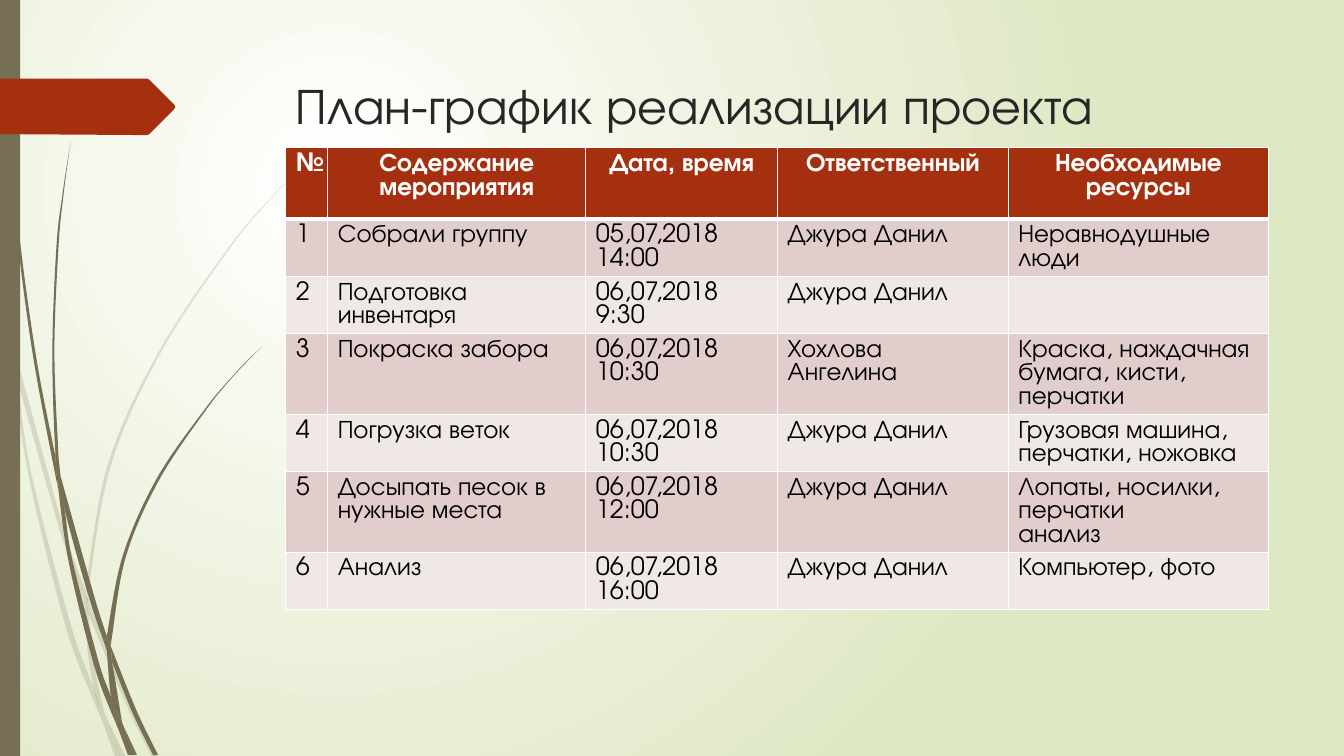
from dataclasses import dataclass

from lxml.etree import SubElement
from pptx import Presentation
from pptx.dml.color import RGBColor
from pptx.enum.shapes import MSO_SHAPE
from pptx.enum.text import MSO_ANCHOR, MSO_AUTO_SIZE, PP_ALIGN
from pptx.oxml.ns import qn
from pptx.util import Pt


@dataclass(frozen=True)
class Theme:
    font: str = "TeX Gyre Adventor"
    title_size: float = 36
    table_size: float = 18
    table_leading: float = 16.8
    title: str = "262626"
    text: str = "000000"
    white: str = "FFFFFF"
    glow_edge: str = "DFE8C4"
    accent: str = "A53010"
    stem: str = "766F54"
    bands: tuple = ("E1CDCC", "F0E8E7")


PALE_BLADES = [
    ([(7.9, 252), (6.5, 231.8), (0, 203)], [(0, 215.3), (7.2, 247.7)]),
    ([(10.1, 248.4), (44.6, 374.4), (61.2, 421.9)],
     [(60.5, 431.3), (41.8, 375.8), (12.2, 270.7)]),
    ([(63.4, 429.1), (66.2, 437), (91.4, 498.2), (111.6, 540)],
     [(108, 540), (88.6, 499.7), (63.4, 439.2)]),
    ([(75.6, 511.9), (89.3, 540)], [(85.7, 540)]),
    ([(7.9, 252), (12.2, 270.7), (22.3, 337.7), (50.4, 445.7), (67, 491.8),
      (71.3, 509), (72.7, 514.1)],
     [(66.2, 499), (46.8, 447.1), (20.2, 338.4), (7.9, 252)]),
    ([(60.5, 431.3), (63.4, 439.2), (65.5, 465.1), (74.2, 508.3), (75.6, 511.9)],
     [(69.1, 498.2), (67, 491.8), (62.6, 465.1), (60.5, 431.3)]),
    ([(224.6, 110.2), (208.1, 126), (193, 141.8), (164.2, 175.7), (113.8, 250.6),
      (77, 331.9), (61.2, 420.5)],
     [(63.4, 429.1), (63.4, 420.5), (79.2, 332.6), (115.2, 251.3), (164.9, 176.4),
      (193, 142.6), (208.8, 126), (224.6, 110.9)]),
    ([(72.7, 514.1), (85.7, 540)], [(82.1, 540)]),
    ([(61.2, 421.9), (63.4, 429.1)], [(63.4, 439.2), (60.5, 431.3)]),
    ([(67, 491.8), (69.1, 498.2), (75.6, 511.9), (85.7, 540)],
     [(72.7, 514.1), (71.3, 509), (67, 491.8)]),
]

DARK_BLADES = [
    ([(2.2, 0), (2.9, 34.6), (5, 79.2), (12.2, 167.8), (23.8, 255.6),
      (40.3, 343.4), (41, 346.3)],
     [(39.6, 326.2), (25.9, 255.6), (13.7, 167), (5.8, 78.5), (3.6, 34.6), (2.9, 0)]),
    ([(43.2, 339.8), (67, 424.8), (76.3, 454.3)],
     [(76.3, 464.4), (63.4, 426.2), (46.1, 363.6), (43.2, 339.8)]),
    ([(79.2, 461.5), (81.4, 467.3), (97.9, 508.3), (113, 539.3)],
     [(109.4, 539.3), (95, 509.8), (79.9, 472.3)]),
    ([(41, 343.4), (46.1, 363.6), (51.8, 400.3), (70.6, 473), (79.2, 497.5),
      (83.5, 516.2), (84.2, 519.8)],
     [(79.9, 509.8), (67, 474.5), (49, 401), (41, 343.4)]),
    ([(50.4, 101.5), (44.6, 139), (40.3, 176.4), (37.4, 251.3), (39.6, 323.3),
      (43.2, 339.8)],
     [(41.8, 326.2), (38.9, 251.3), (41.8, 176.4), (45.4, 139), (50.4, 101.5)]),
    ([(87.8, 517.7), (97.9, 539.3)], [(95.8, 539.3)]),
    ([(39.6, 323.3), (43.2, 339.8)], [(46.1, 363.6), (41, 343.4), (39.6, 326.2)]),
    ([(187.2, 247.7), (176.4, 257.8), (166.3, 268.6), (146.9, 291.6),
      (112.3, 341.3), (87.8, 396.7), (76.3, 454.3)],
     [(79.2, 461.5), (79.9, 455.8), (90, 397.4), (113.8, 342.7), (147.6, 292.3),
      (166.3, 269.3), (176.4, 258.5), (187.2, 247.7)]),
    ([(84.2, 519.8), (94.3, 539.3)], [(91.4, 539.3)]),
    ([(76.3, 464.4), (79.9, 472.3), (87.1, 515.5), (87.8, 517.7)],
     [(83.5, 508.3), (79.2, 497.5), (76.3, 464.4)]),
    ([(76.3, 454.3), (79.2, 461.5)], [(79.9, 472.3), (78.5, 468.7), (76.3, 464.4)]),
    ([(79.2, 497.5), (83.5, 508.3), (87.8, 517.7), (95.8, 539.3)],
     [(93.6, 539.3), (84.2, 519.8), (83.5, 516.2), (79.2, 497.5)]),
]

RIBBON = [(0, 56.2), (105.1, 56.2), (106.6, 56.9), (124.6, 74.9), (125.3, 76.3),
          (124.6, 77.8), (106.6, 95.8), (105.1, 96.5), (0, 95.8)]

PLAN = [
    ("№", "Содержание мероприятия", "Дата, время", "Ответственный", "Необходимые ресурсы"),
    ("1", "Собрали группу", "05,07,2018\n14:00", "Джура Данил", "Неравнодушные люди"),
    ("2", "Подготовка инвентаря", "06,07,2018\n9:30", "Джура Данил", ""),
    ("3", "Покраска забора", "06,07,2018\n10:30", "Хохлова Ангелина",
     "Краска, наждачная бумага, кисти, перчатки"),
    ("4", "Погрузка веток", "06,07,2018\n10:30", "Джура Данил",
     "Грузовая машина, перчатки, ножовка"),
    ("5", "Досыпать песок в нужные места", "06,07,2018\n12:00", "Джура Данил",
     "Лопаты, носилки, перчатки\nанализ"),
    ("6", "Анализ", "06,07,2018\n16:00", "Джура Данил", "Компьютер, фото"),
]


def bend_points(edge):
    padded = [edge[0], *edge, edge[-1]]
    return [[tuple(q + (r - p) / 6 for p, q, r in zip(a, b, c)),
             tuple(r - (s - q) / 6 for q, r, s in zip(b, c, d)), c]
            for a, b, c, d in zip(padded, padded[1:], padded[2:], padded[3:])]


class PlanSlide:
    def __init__(self, deck, theme):
        self.theme = theme
        self.slide = deck.slides.add_slide(deck.slide_layouts[5])

    def background(self):
        fill = self.slide.background.fill
        fill.gradient()
        for stop, color in zip(fill.gradient_stops, (self.theme.white, self.theme.glow_edge)):
            stop.color.rgb = RGBColor.from_string(color)
        gradient = self.slide.element.find(".//" + qn("a:gradFill"))
        gradient.remove(gradient.find(qn("a:lin")))
        glow = SubElement(gradient, qn("a:path"), {"path": "circle"})
        SubElement(glow, qn("a:fillToRect"),
                   {"l": "50000", "t": "50000", "r": "100000", "b": "100000"})

    def paint(self, shape, color, opacity=100):
        shape.shadow.inherit = False
        shape.fill.solid()
        shape.fill.fore_color.rgb = RGBColor.from_string(color)
        shape.line.fill.background()
        if opacity < 100:
            tint = shape.element.spPr.find(qn("a:solidFill"))[0]
            SubElement(tint, qn("a:alpha"), {"val": str(opacity * 1000)})

    def outline(self, points, color, opacity=100):
        first, *rest = [(Pt(x), Pt(y)) for x, y in points]
        builder = self.slide.shapes.build_freeform(*first)
        builder.add_line_segments(rest, close=True)
        shape = builder.convert_to_shape()
        self.paint(shape, color, opacity)
        return shape

    def blades(self, edges, opacity=100):
        for outward, back in edges:
            blade = self.outline(outward + back, self.theme.stem, opacity)
            sides = list(blade.element.iter(qn("a:lnTo")))
            bends = [*bend_points(outward), None, *bend_points(back)]
            for side, bend in zip(sides, bends):
                if bend:
                    side.clear()
                    side.tag = qn("a:cubicBezTo")
                    for x, y in bend:
                        SubElement(side, qn("a:pt"), {"x": str(Pt(x) - blade.left),
                                                      "y": str(Pt(y) - blade.top)})

    def bar(self, left, top, width, height, color):
        bar = self.slide.shapes.add_shape(
            MSO_SHAPE.RECTANGLE, Pt(left), Pt(top), Pt(width), Pt(height))
        self.paint(bar, color)

    def style(self, paragraph, size, color, align=PP_ALIGN.LEFT, bold=False):
        paragraph.alignment = align
        font = paragraph.font
        font.name, font.size, font.bold = self.theme.font, Pt(size), bold
        font.color.rgb = RGBColor.from_string(color)

    def title(self, text, left, top, width, height):
        title = self.slide.shapes.title
        title.left, title.top, title.width, title.height = map(Pt, (left, top, width, height))
        frame = title.text_frame
        frame.text = text
        frame.word_wrap = True
        frame.auto_size = MSO_AUTO_SIZE.NONE
        frame.vertical_anchor = MSO_ANCHOR.TOP
        self.style(frame.paragraphs[0], self.theme.title_size, self.theme.title)

    def borders(self, cell, widths):
        properties = cell._tc.get_or_add_tcPr()
        for side, width in widths.items():
            line = SubElement(properties, qn("a:ln" + side), {"w": str(Pt(width))})
            SubElement(SubElement(line, qn("a:solidFill")), qn("a:srgbClr"),
                       {"val": self.theme.white})

    def table(self, rows, left, top, widths, heights):
        theme = self.theme
        table = self.slide.shapes.add_table(
            len(rows), len(widths), Pt(left), Pt(top), Pt(sum(widths)), Pt(sum(heights))).table
        for column, width in zip(table.columns, widths):
            column.width = Pt(width)
        for index, (row, height, texts) in enumerate(zip(table.rows, heights, rows)):
            row.height = Pt(height)
            header = index == 0
            color = theme.accent if header else theme.bands[(index - 1) % 2]
            align = PP_ALIGN.CENTER if header else PP_ALIGN.LEFT
            for cell, text in zip(row.cells, texts):
                self.borders(cell, {"L": 1, "R": 1, "T": 3 if index == 1 else 1,
                                    "B": 3 if header else 1})
                cell.fill.solid()
                cell.fill.fore_color.rgb = RGBColor.from_string(color)
                cell.text = text
                for paragraph in cell.text_frame.paragraphs:
                    paragraph.line_spacing = Pt(theme.table_leading)
                    self.style(paragraph, theme.table_size,
                               theme.white if header else theme.text, align, header)


def main():
    deck = Presentation()
    deck.slide_width, deck.slide_height = Pt(960), Pt(540)
    theme = Theme()
    plan = PlanSlide(deck, theme)
    plan.background()
    plan.blades(PALE_BLADES, opacity=20)
    plan.blades(DARK_BLADES)
    plan.bar(0, 0, 14.4, 540, theme.stem)
    plan.outline(RIBBON, theme.accent)
    plan.title("План-график реализации проекта", 204.1, 49.1, 702, 101)
    plan.table(PLAN, 204.1, 105.6, (30, 184.4, 137, 164.8, 185.8), (51, *[29.5] * 6))
    deck.save("out.pptx")


if __name__ == "__main__":
    main()
